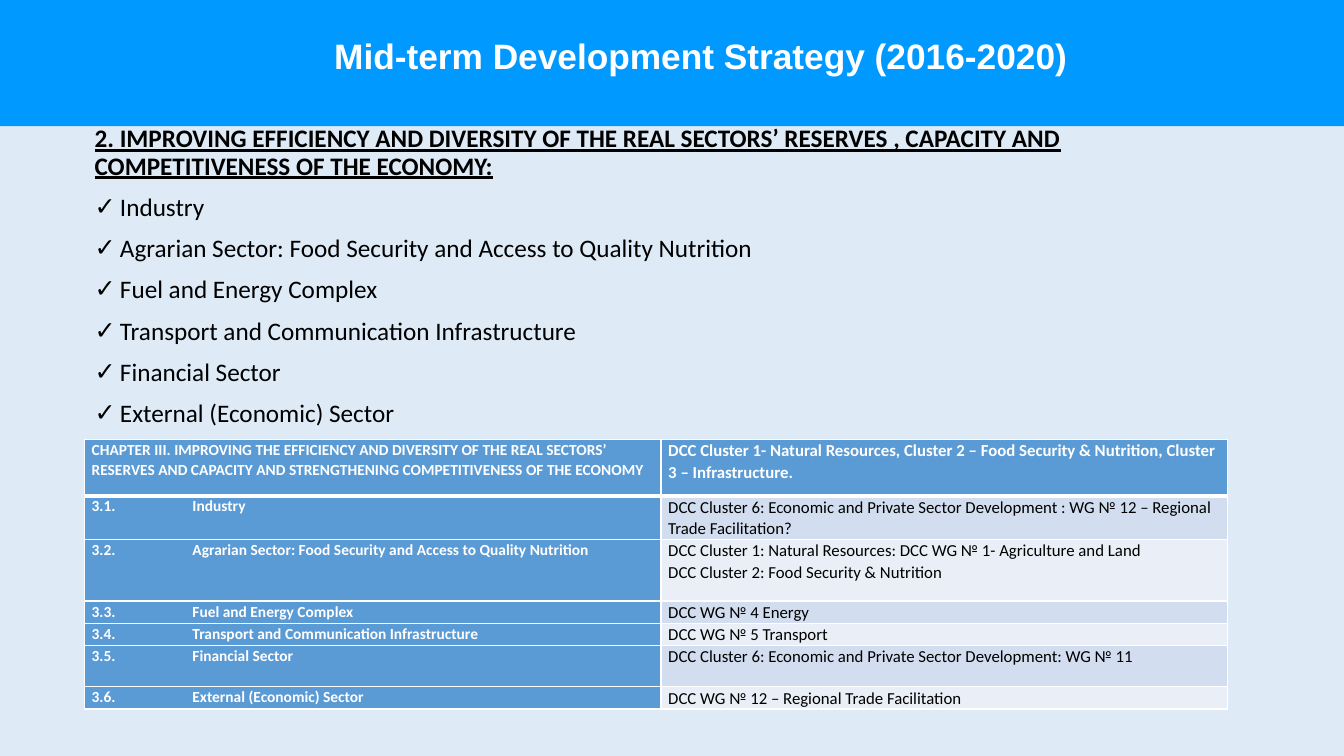
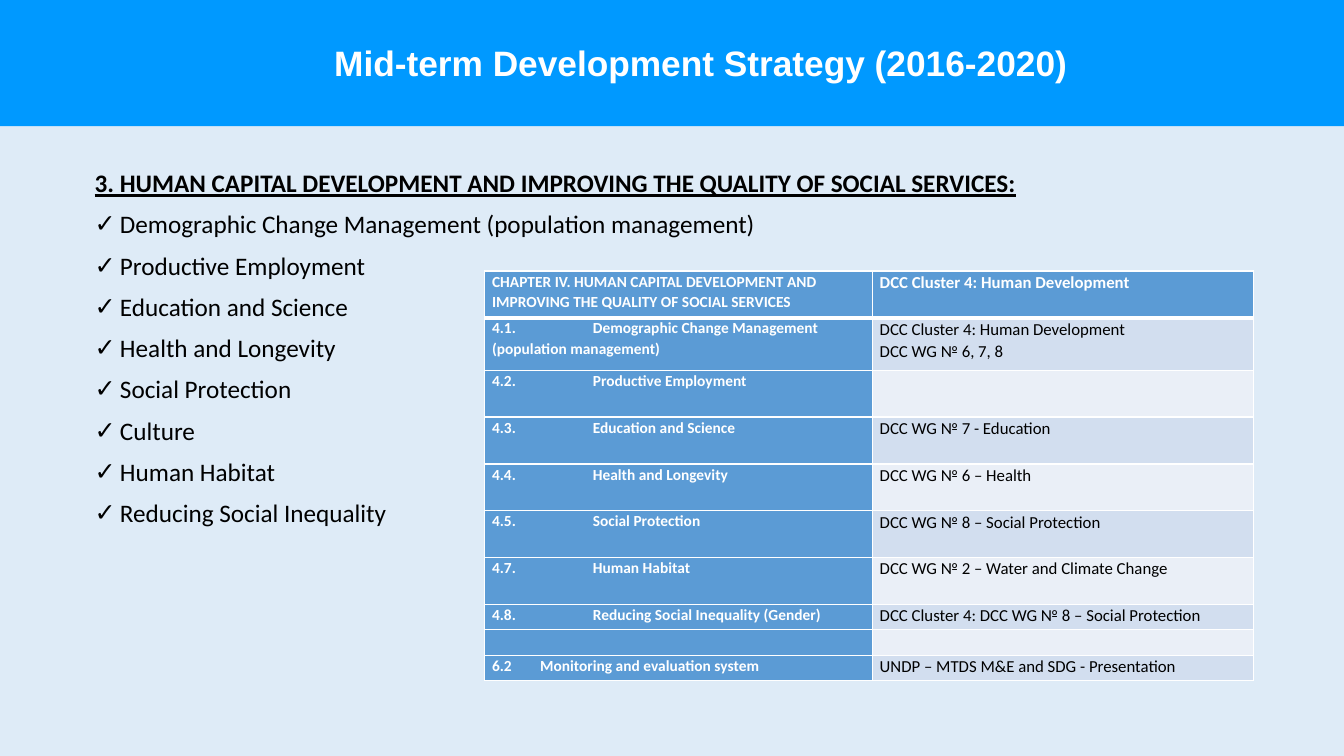
import pptx
import pptx.util
import pptx.dml.color
import pptx.enum.shapes
import pptx.enum.text
import pptx.oxml
import pptx.oxml.ns
import lxml.etree

Cm = pptx.util.Cm
Pt = pptx.util.Pt

COLORS = {
    "back": "DEEBF7",
    "band": "0099FF",
    "head": "5B9BD5",
    "odd": "D2DEEF",
    "even": "EAEFF7",
    "white": "FFFFFF",
    "black": "000000",
}
FONTS = {
    "title": {"name": "Arial", "size": Pt(25.2), "bold": True},
    "lead": {"name": "Calibri", "size": Pt(18), "bold": True, "underline": True},
    "item": {"name": "Calibri", "size": Pt(18), "bold": False, "underline": False},
    "label": {"name": "Calibri", "size": Pt(11), "bold": True},
    "top": {"name": "Calibri", "size": Pt(12), "bold": True},
    "note": {"name": "Calibri", "size": Pt(12), "bold": False},
}
LIST = {"line_spacing": 0.9, "space_before": Pt(10), "space_after": Pt(0)}
CELL = {"line_spacing": 1.07, "space_before": Pt(0), "space_after": Pt(0)}
INSET = {"margin_left": Cm(0.18), "margin_right": Cm(0.18),
         "margin_top": 0, "margin_bottom": 0}
WIDE, HIGH, BAND = Cm(33.87), Cm(19.05), Cm(3.18)
TAB = Cm(2.54)

TITLE = "Mid-term Development Strategy (2016-2020)"
PAGES = [
    {
        "title": (Cm(1.9), Cm(0.3), Cm(31.52), Cm(2.31)),
        "list": (Cm(2.13), Cm(3.05), Cm(29.46), Cm(15.47)),
        "table": (Cm(2.13), Cm(11.07)),
        "cols": (14.53, 14.27),
        "lead": "2. IMPROVING EFFICIENCY AND DIVERSITY OF THE REAL SECTORS’ RESERVES , "
                "CAPACITY AND COMPETITIVENESS OF THE ECONOMY:",
        "items": [
            "Industry",
            "Agrarian Sector: Food Security and Access to Quality Nutrition",
            "Fuel and Energy Complex",
            "Transport and Communication Infrastructure",
            "Financial Sector",
            "External (Economic) Sector",
        ],
        "rows": [
            (1.42, "CHAPTER III. IMPROVING THE EFFICIENCY AND DIVERSITY OF THE REAL SECTORS’ "
                   "RESERVES AND CAPACITY AND STRENGTHENING COMPETITIVENESS OF THE ECONOMY",
             "DCC Cluster 1- Natural Resources, Cluster 2 – Food Security & Nutrition, "
             "Cluster 3 – Infrastructure."),
            (1.1, "3.1.\tIndustry",
             "DCC Cluster 6: Economic and Private Sector Development : WG № 12 – Regional "
             "Trade Facilitation?"),
            (1.55, "3.2.\tAgrarian Sector: Food Security and Access to Quality Nutrition",
             "DCC Cluster 1: Natural Resources: DCC WG № 1- Agriculture and Land\n"
             "DCC Cluster 2: Food Security & Nutrition"),
            (0.56, "3.3.\tFuel and Energy Complex", "DCC WG № 4 Energy"),
            (0.56, "3.4.\tTransport and Communication Infrastructure", "DCC WG № 5 Transport"),
            (1.04, "3.5.\tFinancial Sector",
             "DCC Cluster 6: Economic and Private Sector Development: WG № 11"),
            (0.56, "3.6.\tExternal (Economic) Sector",
             "DCC WG № 12 – Regional Trade Facilitation"),
        ],
    },
    {
        "title": (Cm(1.9), Cm(0.3), Cm(31.52), Cm(2.67)),
        "list": (Cm(2.13), Cm(4.18), Cm(29.46), Cm(14.34)),
        "table": (Cm(12.22), Cm(6.83)),
        "cols": (9.77, 9.6),
        "lead": "3. HUMAN CAPITAL DEVELOPMENT AND IMPROVING THE QUALITY OF SOCIAL SERVICES:",
        "items": [
            "Demographic Change Management (population management)",
            "Productive Employment",
            "Education and Science",
            "Health and Longevity",
            "Social Protection",
            "Culture",
            "Human Habitat",
            "Reducing Social Inequality",
        ],
        "rows": [
            (1.18, "CHAPTER IV. HUMAN CAPITAL DEVELOPMENT AND IMPROVING THE QUALITY OF "
                   "SOCIAL SERVICES", "DCC Cluster 4: Human Development"),
            (1.32, "4.1.\tDemographic Change Management (population management)",
             "DCC Cluster 4: Human Development\nDCC WG № 6, 7, 8"),
            (1.18, "4.2.\tProductive Employment", ""),
            (1.18, "4.3.\tEducation and Science", "DCC WG № 7 - Education"),
            (1.18, "4.4.\tHealth and Longevity", "DCC WG № 6 – Health"),
            (1.18, "4.5.\tSocial Protection", "DCC WG № 8 – Social Protection"),
            (1.18, "4.7.\tHuman Habitat", "DCC WG № 2 – Water and Climate Change"),
            (0.64, "4.8.\tReducing Social Inequality (Gender)",
             "DCC Cluster 4: DCC WG № 8 – Social Protection"),
            (0.64, "", ""),
            (0.64, "6.2\tMonitoring and evaluation system",
             "UNDP – MTDS M&E and SDG - Presentation"),
        ],
        "tabs": {9: Cm(1.21)},
    },
]


def put(thing, vals):
    for key, val in vals.items():
        setattr(thing, key, val)


def paint(fill, hue):
    fill.solid()
    fill.fore_color.rgb = pptx.dml.color.RGBColor.from_string(COLORS[hue])


def ink(font, style, hue):
    put(font, FONTS[style])
    font.color.rgb = pptx.dml.color.RGBColor.from_string(COLORS[hue])


def place(shape, box):
    put(shape, dict(zip(("left", "top", "width", "height"), box)))


def node(root, tag, **vals):
    part = lxml.etree.SubElement(root, pptx.oxml.ns.qn(tag))
    for key, val in vals.items():
        part.set(key, str(val))
    return part


def add_band(slide):
    """Draw the band and move it to the slide's layout, behind the title."""
    band = slide.shapes.add_shape(
        pptx.enum.shapes.MSO_SHAPE.RECTANGLE, 0, 0, WIDE, BAND)
    band.shadow.inherit = False
    band.line.fill.background()
    paint(band.fill, "band")
    slide.slide_layout.shapes._spTree.insert(2, band._element)


def add_title(slide, box):
    title = slide.shapes.title
    place(title, box)
    frame = title.text_frame
    frame.text = TITLE
    put(frame, {"vertical_anchor": pptx.enum.text.MSO_ANCHOR.MIDDLE,
                "auto_size": pptx.enum.text.MSO_AUTO_SIZE.NONE})
    para = frame.paragraphs[0]
    put(para, {"alignment": pptx.enum.text.PP_ALIGN.CENTER, "line_spacing": 0.9})
    ink(para.runs[0].font, "title", "white")


def add_list(slide, box, lead, items):
    """Fill the body with an underlined lead and ticked items."""
    body = slide.placeholders[1]
    place(body, box)
    frame = body.text_frame
    frame.text = "\n".join([lead] + items)
    frame.auto_size = pptx.enum.text.MSO_AUTO_SIZE.NONE
    for num, para in enumerate(frame.paragraphs):
        put(para, LIST)
        ink(para.runs[0].font, "item" if num else "lead", "black")
        props = para._p.get_or_add_pPr()
        dent = Cm(0.64) if num else 0
        props.set("marL", str(dent))
        props.set("indent", str(-dent))
        if num:
            node(props, "a:buChar", char="✓")
        else:
            node(props, "a:buNone")


def edge(cell, row):
    """Give a cell white borders, thick between head and body."""
    props = cell._tc.get_or_add_tcPr()
    thick = {("a:lnB", 0), ("a:lnT", 1)}
    for spot, tag in enumerate(("a:lnL", "a:lnR", "a:lnT", "a:lnB")):
        line = node(props, tag, w=Pt(3 if (tag, row) in thick else 1))
        node(node(line, "a:solidFill"), "a:srgbClr", val=COLORS["white"])
        props.insert(spot, line)


def fill_cell(cell, text, row, col, tab):
    head = row == 0 or col == 0
    style = "label" if col == 0 else "note" if row else "top"
    put(cell, INSET)
    paint(cell.fill, "head" if head else "odd" if row % 2 else "even")
    edge(cell, row)
    cell.text_frame.text = text
    for para in cell.text_frame.paragraphs:
        put(para, CELL)
        tabs = node(para._p.get_or_add_pPr(), "a:tabLst")
        node(tabs, "a:tab", pos=tab, algn="l")
        for run in para.runs:
            ink(run.font, style, "white" if head else "black")
        if not text:
            node(para._p, "a:endParaRPr", sz=1100)


def add_grid(slide, spot, cols, rows, tabs):
    wide = Cm(sum(cols))
    high = Cm(sum(row[0] for row in rows))
    grid = slide.shapes.add_table(len(rows), len(cols), *spot, wide, high).table
    for col, size in zip(grid.columns, cols):
        col.width = Cm(size)
    for num, (size, *texts) in enumerate(rows):
        grid.rows[num].height = Cm(size)
        for col, text in enumerate(texts):
            fill_cell(grid.cell(num, col), text, num, col, tabs.get(num, TAB))


def main():
    deck = pptx.Presentation()
    put(deck, {"slide_width": WIDE, "slide_height": HIGH})
    paint(deck.slide_master.background.fill, "back")
    for num, page in enumerate(PAGES):
        slide = deck.slides.add_slide(deck.slide_layouts[1])
        if num == 0:
            add_band(slide)
        add_title(slide, page["title"])
        add_list(slide, page["list"], page["lead"], page["items"])
        add_grid(slide, page["table"], page["cols"], page["rows"], page.get("tabs", {}))
    deck.save("out.pptx")


if __name__ == "__main__":
    main()
